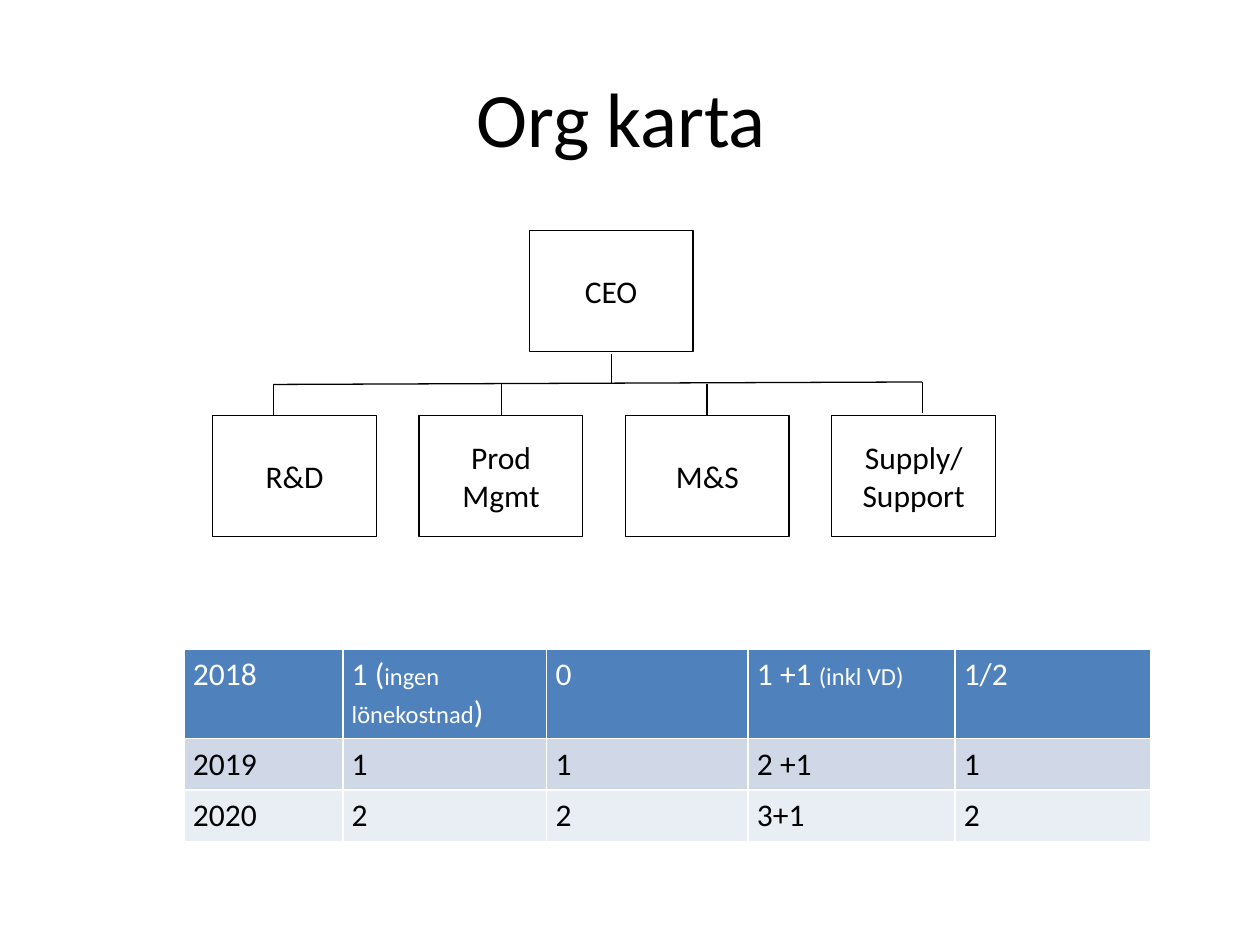
from pptx import Presentation
from pptx.dml.color import RGBColor
from pptx.enum.shapes import MSO_CONNECTOR, MSO_SHAPE
from pptx.enum.text import MSO_ANCHOR, PP_ALIGN
from pptx.oxml.ns import qn
from pptx.util import Cm, Pt
from lxml.etree import SubElement

BLACK = RGBColor(0x00, 0x00, 0x00)
WHITE = RGBColor(0xFF, 0xFF, 0xFF)
HEADER_BLUE = RGBColor(0x4F, 0x81, 0xBD)
BAND_DARK = RGBColor(0xD0, 0xD8, 0xE8)
BAND_LIGHT = RGBColor(0xE9, 0xED, 0xF4)

FONT = "Calibri"
BOX_W, BOX_H = 3.3, 2.44
BOX_LEFT, BOX_TOP, BOX_PITCH = 4.29, 8.38, 4.16
BAR_Y = 7.75

UNITS = ["R&D", "Prod Mgmt", "M&S", "Supply/Support"]

# Each line is x1, y1, x2, y2; the bar rises slightly to the right
LINES = [
    (5.51, BAR_Y, 18.59, 7.7),
    (5.51, BAR_Y, 5.51, BOX_TOP),
    (18.59, 7.7, 18.59, 8.33),
    (10.11, BAR_Y, 10.11, BOX_TOP),
    (14.25, BAR_Y, 14.25, BOX_TOP),
    (12.32, 7.14, 12.32, BAR_Y),
]

# Each cell is a list of (text, size) runs
COL_WIDTHS = [3.2, 4.11, 4.06, 4.17, 3.94]
ROW_H = 1.03
STAFF = [
    [[("2018", 18)], [("1 (", 18), ("ingen lönekostnad", 14), (")", 18)],
     [("0", 18)], [("1 +1 ", 18), ("(inkl VD)", 14)], [("1/2", 18)]],
    [[(t, 18)] for t in ("2019", "1", "1", "2 +1", "1")],
    [[(t, 18)] for t in ("2020", "2", "2", "3+1", "2")],
]
ROW_STYLES = [(HEADER_BLUE, WHITE), (BAND_DARK, BLACK), (BAND_LIGHT, BLACK)]


def set_font(font, size, color):
    font.name = FONT
    font.size = Pt(size)
    font.bold = False
    font.color.rgb = color


def center_text(s, text, size):
    tf = s.text_frame
    tf.word_wrap = True
    tf.vertical_anchor = MSO_ANCHOR.MIDDLE
    p = tf.paragraphs[0]
    p.text = text
    p.alignment = PP_ALIGN.CENTER
    set_font(p.font, size, BLACK)


def add_title(slide, text):
    s = slide.shapes.add_textbox(Cm(1.27), Cm(0.76), Cm(22.86), Cm(3.18))
    center_text(s, text, 44)


def add_box(slide, x, y, text):
    s = slide.shapes.add_shape(MSO_SHAPE.RECTANGLE,
                               Cm(x), Cm(y), Cm(BOX_W), Cm(BOX_H))
    s.shadow.inherit = False
    s.fill.solid()
    s.fill.fore_color.rgb = WHITE
    s.line.color.rgb = BLACK
    s.line.width = Pt(0.75)
    center_text(s, text, 18)


def add_line(slide, x1, y1, x2, y2):
    s = slide.shapes.add_connector(MSO_CONNECTOR.STRAIGHT,
                                   Cm(x1), Cm(y1), Cm(x2), Cm(y2))
    s.line.color.rgb = BLACK
    s.line.width = Pt(0.75)
    SubElement(s._element.spPr, qn("a:effectLst"))


def fill_cell(cell, runs, fill, color):
    cell.fill.solid()
    cell.fill.fore_color.rgb = fill
    cell.margin_left = cell.margin_right = Cm(0.18)
    cell.margin_top = cell.margin_bottom = Cm(0.13)
    p = cell.text_frame.paragraphs[0]
    for text, size in runs:
        r = p.add_run()
        r.text = text
        set_font(r.font, size, color)


def add_staff_table(slide, x, y):
    table = slide.shapes.add_table(
        len(STAFF), len(COL_WIDTHS), Cm(x), Cm(y),
        Cm(sum(COL_WIDTHS)), Cm(ROW_H * len(STAFF))).table
    for col, width in zip(table.columns, COL_WIDTHS):
        col.width = Cm(width)
    for row, cells, (fill, color) in zip(table.rows, STAFF, ROW_STYLES):
        row.height = Cm(ROW_H)
        for cell, runs in zip(row.cells, cells):
            fill_cell(cell, runs, fill, color)


def main():
    prs = Presentation()
    prs.slide_width, prs.slide_height = Cm(25.4), Cm(19.05)
    slide = prs.slides.add_slide(prs.slide_layouts[6])

    # Organisation chart
    add_box(slide, 10.67, 4.65, "CEO")
    for i, unit in enumerate(UNITS):
        add_box(slide, BOX_LEFT + i * BOX_PITCH, BOX_TOP, unit)
    for line in LINES:
        add_line(slide, *line)

    # Headcount per year
    add_staff_table(slide, 3.71, 13.08)

    # Title
    add_title(slide, "Org karta ")

    prs.save("out.pptx")


if __name__ == "__main__":
    main()
